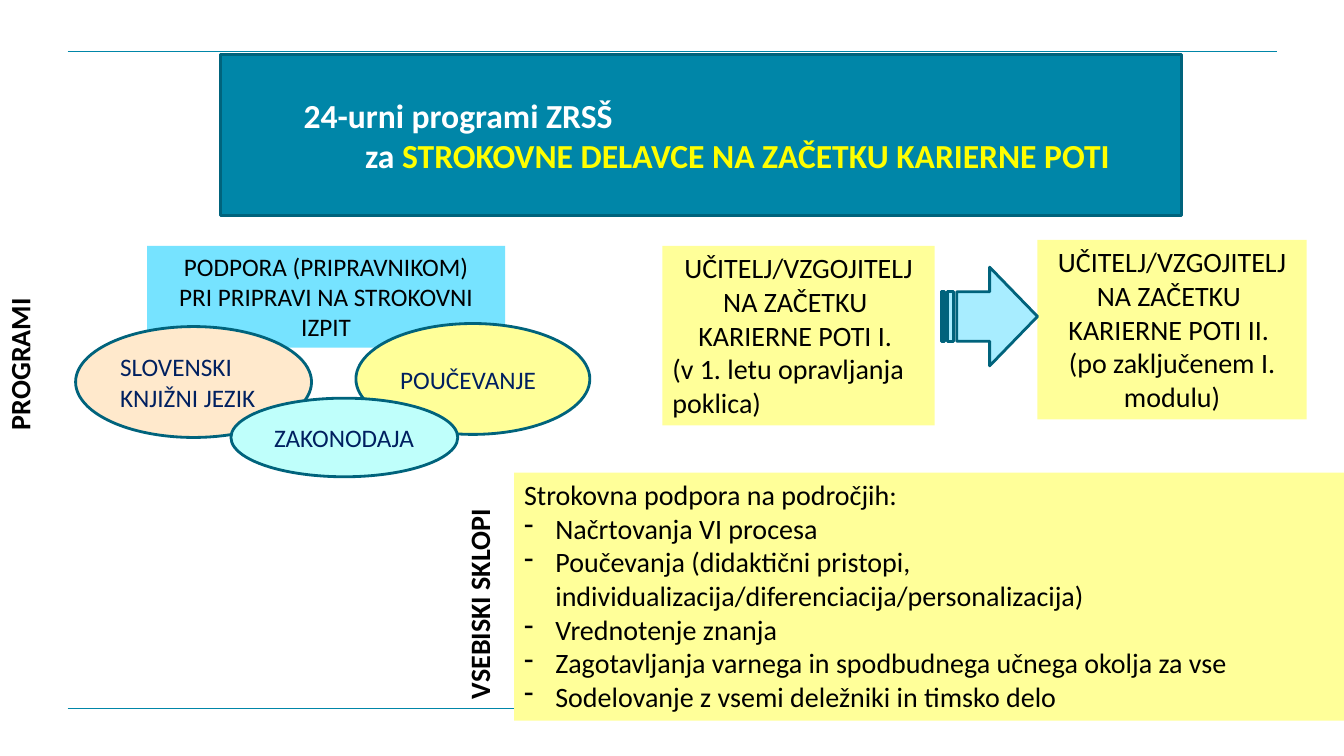
from pptx import Presentation
from pptx.dml.color import RGBColor
from pptx.enum.shapes import MSO_CONNECTOR, MSO_SHAPE
from pptx.enum.text import MSO_ANCHOR, MSO_AUTO_SIZE, PP_ALIGN
from pptx.oxml.ns import qn
from pptx.util import Pt
from lxml.etree import SubElement

PX = 9144  # EMU in one px, 100 px to the inch
TEAL, DARK_TEAL, NAVY = "0086A8", "00637C", "002060"
YELLOW, PALE_YELLOW = "FFFF00", "FFFF99"
BLACK, WHITE = "000000", "FFFFFF"
LEFT, CENTER = PP_ALIGN.LEFT, PP_ALIGN.CENTER


def rgb(color):
    return RGBColor.from_string(color)


class SlideBuilder:
    font = "Calibri"
    outline_width = Pt(2)

    def __init__(self, page):
        self.page = page

    def rule(self, x, y, width):
        line = self.page.shapes.add_connector(
            MSO_CONNECTOR.STRAIGHT, x * PX, y * PX, (x + width) * PX, y * PX)
        line.line.color.rgb = rgb(TEAL)
        line.line.width = Pt(1)
        SubElement(line._element.spPr, qn("a:effectLst"))

    def paint(self, shape, fill, outlined):
        shape.fill.solid()
        shape.fill.fore_color.rgb = rgb(fill)
        if outlined:
            shape.line.color.rgb = rgb(DARK_TEAL)
            shape.line.width = self.outline_width
        else:
            shape.line.fill.background()

    def shape(self, kind, bounds, fill, outlined=True):
        shape = self.page.shapes.add_shape(kind, *(n * PX for n in bounds))
        shape.shadow.inherit = False
        self.paint(shape, fill, outlined)
        return shape

    def add_text(self, frame, lines, size, color, bold=False, anchor=MSO_ANCHOR.TOP):
        """Each line is (alignment, text or list of (text, colour) runs)."""
        frame.word_wrap = True
        frame.auto_size = MSO_AUTO_SIZE.NONE
        frame.vertical_anchor = anchor
        for index, (align, runs) in enumerate(lines):
            para = frame.paragraphs[0] if index == 0 else frame.add_paragraph()
            para.alignment = align
            if isinstance(runs, str):
                runs = [(runs, color)]
            for text, run_color in runs:
                span = para.add_run()
                span.text = text
                span.font.name = self.font
                span.font.size = Pt(size)
                span.font.bold = bold
                span.font.color.rgb = rgb(run_color)

    def indent(self, para, margin, bullet=None):
        """Indent a paragraph; a bullet hangs in the margin."""
        props = para._p.get_or_add_pPr()
        props.set("marL", str(margin * PX))
        props.set("indent", str(-margin * PX if bullet else 0))
        if bullet:
            SubElement(props, qn("a:buChar")).set("char", bullet)

    def oval_title(self, bounds, lines, size):
        """Give the title placeholder an elliptical outline and its text."""
        title = self.page.shapes.title
        title.left, title.top, title.width, title.height = (n * PX for n in bounds)
        geometry = SubElement(title._element.spPr, qn("a:prstGeom"))
        geometry.set("prst", "ellipse")
        SubElement(geometry, qn("a:avLst"))
        self.paint(title, TEAL, True)
        self.add_text(title.text_frame, lines, size, WHITE, True, MSO_ANCHOR.MIDDLE)
        return title

    def box(self, bounds, fill, lines, size=20):
        box = self.shape(MSO_SHAPE.RECTANGLE, bounds, fill, outlined=False)
        self.add_text(box.text_frame, lines, size, BLACK)
        return box

    def oval(self, bounds, fill, text):
        oval = self.shape(MSO_SHAPE.OVAL, bounds, fill)
        self.add_text(oval.text_frame, [(LEFT, text)], 18, NAVY, anchor=MSO_ANCHOR.MIDDLE)

    def side_label(self, bounds, text):
        label = self.page.shapes.add_textbox(*(n * PX for n in bounds))
        label.rotation = 270
        self.add_text(label.text_frame, [(LEFT, text)], 20, BLACK, True)


def main():
    deck = Presentation()
    deck.slide_width, deck.slide_height = 1333 * PX, 750 * PX
    page = deck.slides.add_slide(deck.slide_layouts[5])
    builder = SlideBuilder(page)

    for y in (703, 51):
        builder.rule(67, y, 1200)

    title = builder.oval_title((219, 54, 953, 160), [
        (LEFT, "24-urni programi ZRSŠ"),
        (CENTER, [("za ", WHITE),
                  ("STROKOVNE DELAVCE NA ZAČETKU KARIERNE POTI", YELLOW)]),
    ], 24)
    builder.indent(title.text_frame.paragraphs[0], 72)

    stages = [
        ((657, 244, 270, 178), "I.", LEFT, "(v 1. letu opravljanja poklica)"),
        ((1029, 238, 267, 178), "II.", CENTER, "(po zaključenem I. modulu)"),
    ]
    for bounds, number, note_align, note in stages:
        builder.box(bounds, PALE_YELLOW, [
            (CENTER, "UČITELJ/VZGOJITELJ NA ZAČETKU "),
            (CENTER, f"KARIERNE POTI {number} "),
            (note_align, note),
        ])

    builder.side_label((-67, 328, 173, 44), "PROGRAMI")

    topics = [
        "Načrtovanja VI procesa",
        "Poučevanja (didaktični pristopi, individualizacija/diferenciacija/personalizacija)",
        "Vrednotenje znanja",
        "Zagotavljanja varnega in spodbudnega učnega okolja za vse",
        "Sodelovanje z vsemi deležniki in timsko delo",
    ]
    support = builder.box(
        (510, 469, 824, 246), PALE_YELLOW,
        [(LEFT, text) for text in ["Strokovna podpora na področjih:", *topics]])
    for para in support.text_frame.paragraphs[1:]:
        builder.indent(para, 31, "-")
    builder.side_label((342, 548, 267, 44), "VSEBISKI SKLOPI")

    builder.box((146, 244, 355, 101), "76E3FF", [
        (CENTER, "PODPORA (PRIPRAVNIKOM)"),
        (CENTER, "PRI PRIPRAVI NA STROKOVNI IZPIT"),
    ], 18)
    builder.oval((353, 321, 232, 110), PALE_YELLOW, "POUČEVANJE")
    builder.oval((75, 324, 234, 110), "FFE9CC", "SLOVENSKI KNJIŽNI JEZIK")
    builder.shape(MSO_SHAPE.STRIPED_RIGHT_ARROW, (934, 265, 95, 98), "A8EDFF")
    builder.oval((229, 395, 225, 78), "BFFFFB", "ZAKONODAJA")

    deck.save("out.pptx")


if __name__ == "__main__":
    main()
